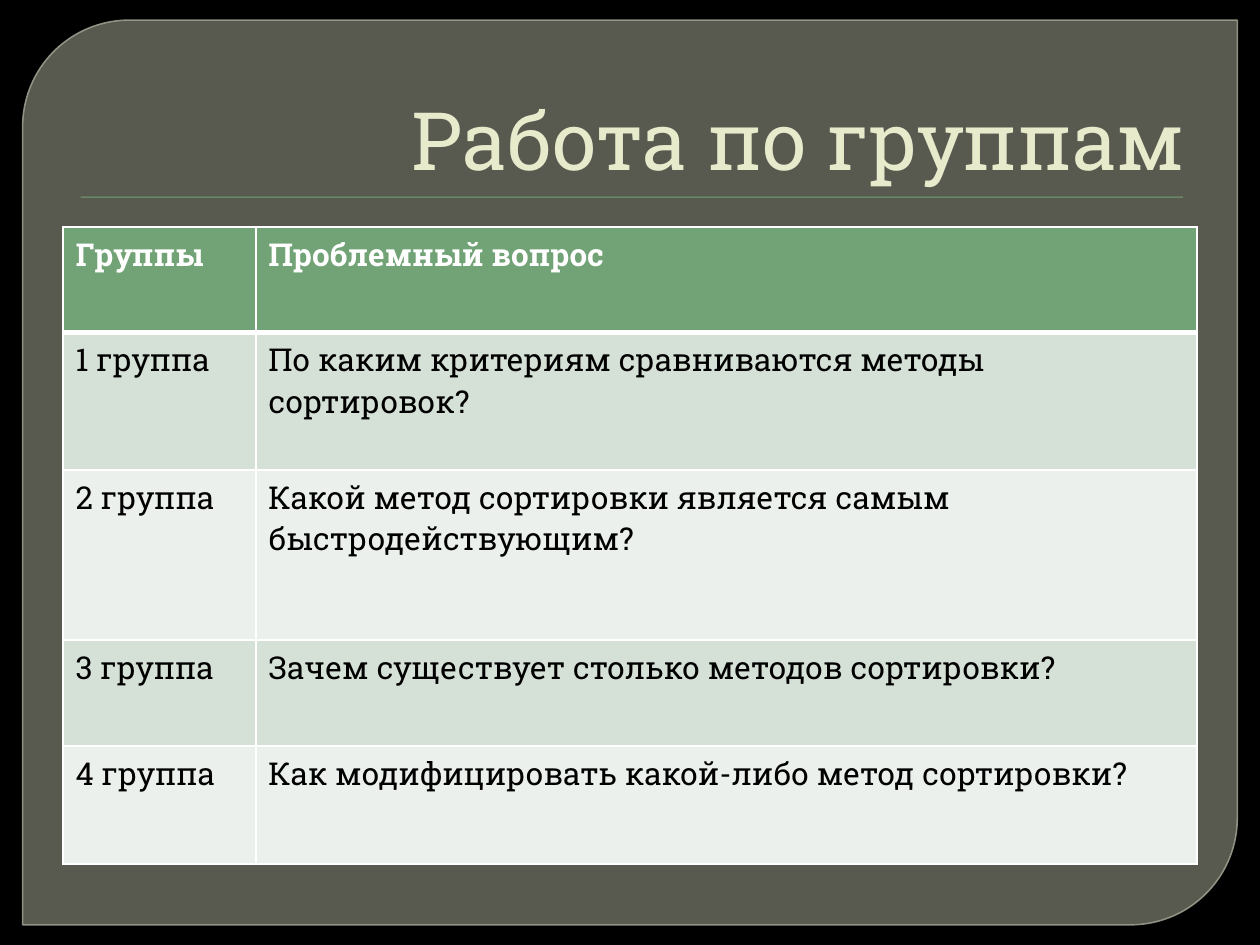
from lxml.etree import SubElement
from pptx import Presentation
from pptx.dml.color import RGBColor
from pptx.enum.shapes import MSO_SHAPE
from pptx.enum.text import MSO_ANCHOR, PP_ALIGN
from pptx.oxml.ns import qn
from pptx.util import Inches, Pt

TITLE = "Работа по группам"
HEADER = ("Группы", "Проблемный вопрос")
QUESTIONS = [
    "По каким критериям сравниваются методы сортировок?",
    "Какой метод сортировки является самым быстродействующим?",
    "Зачем существует столько методов сортировки?",
    "Как модифицировать какой-либо метод сортировки?",
]
COLUMN_WIDTHS = (1.53, 7.47)
ROW_HEIGHTS = (0.84, 1.09, 1.35, 0.84, 0.94)
BAND_COLORS = ("D5E0D6", "EBF0EC")
GREEN = "72A376"
FONT = "Roboto Slab"


def color(hex_string):
    return RGBColor.from_string(hex_string)


def box(left, top, width, height):
    return [Inches(value) for value in (left, top, width, height)]


def write(frame, text, size=18, ink="000000", bold=False, align=PP_ALIGN.LEFT):
    frame.word_wrap = True
    paragraph = frame.paragraphs[0]
    paragraph.alignment = align
    run = paragraph.add_run()
    run.text = text
    run.font.name = FONT
    run.font.size = Pt(size)
    run.font.bold = bold
    run.font.color.rgb = color(ink)


def set_alpha(fill, percent):
    """Make the solid fill of a shape or line partly transparent."""
    tint = fill._xPr.find(qn("a:solidFill"))[0]
    SubElement(tint, qn("a:alpha")).set("val", str(percent * 1000))


def set_borders(cell, bottom_width):
    properties = cell._tc.get_or_add_tcPr()
    widths = {"lnL": 1, "lnR": 1, "lnT": 1, "lnB": bottom_width}
    for position, (side, width) in enumerate(widths.items()):
        line = SubElement(properties, qn(f"a:{side}"), w=str(Pt(width)))
        solid = SubElement(line, qn("a:solidFill"))
        SubElement(solid, qn("a:srgbClr"), val="FFFFFF")
        properties.insert(position, line)


def add_panel(slide):
    panel = slide.shapes.add_shape(
        MSO_SHAPE.ROUND_2_DIAG_RECTANGLE, *box(0.18, 0.16, 9.64, 7.18))
    panel.adjustments[0] = 0.118
    panel.adjustments[1] = 0
    panel.shadow.inherit = False
    panel.fill.solid()
    panel.fill.fore_color.rgb = color("888B7B")
    set_alpha(panel.fill._fill_format if hasattr(panel.fill, "_fill_format") else panel.fill, 65)
    panel.line.width = Pt(0.87)
    panel.line.color.rgb = color("9DA090")
    set_alpha(panel.line.fill, 88)


def add_title(slide):
    rule = slide.shapes.add_shape(MSO_SHAPE.RECTANGLE, *box(0.64, 1.56, 8.75, 0.01))
    rule.shadow.inherit = False
    rule.fill.solid()
    rule.fill.fore_color.rgb = color(GREEN)
    rule.line.fill.background()

    title = slide.shapes.add_textbox(*box(0.5, 0.28, 9, 1.25))
    title.text_frame.vertical_anchor = MSO_ANCHOR.BOTTOM
    write(title.text_frame, TITLE, size=46, ink="E7EACB", align=PP_ALIGN.RIGHT)


def add_questions(slide):
    rows = [HEADER] + [(f"{number} группа", question)
                       for number, question in enumerate(QUESTIONS, 1)]
    table = slide.shapes.add_table(
        len(rows), len(HEADER),
        *box(0.5, 1.8, sum(COLUMN_WIDTHS), sum(ROW_HEIGHTS))).table
    for column, width in zip(table.columns, COLUMN_WIDTHS):
        column.width = Inches(width)
    for r, (texts, height) in enumerate(zip(rows, ROW_HEIGHTS)):
        table.rows[r].height = Inches(height)
        is_header = r == 0
        for c, text in enumerate(texts):
            cell = table.cell(r, c)
            cell.fill.solid()
            cell.fill.fore_color.rgb = color(GREEN if is_header else BAND_COLORS[(r - 1) % 2])
            set_borders(cell, bottom_width=3 if is_header else 1)
            if r == 1:
                cell._tc.tcPr.find(qn("a:lnT")).set("w", str(Pt(3)))
            write(cell.text_frame, text, bold=is_header,
                  ink="FFFFFF" if is_header else "000000")


def main():
    deck = Presentation()
    deck.slide_width, deck.slide_height = Inches(10), Inches(7.5)
    slide = deck.slides.add_slide(deck.slide_layouts[6])
    slide.background.fill.solid()
    slide.background.fill.fore_color.rgb = color("000000")
    add_panel(slide)
    add_title(slide)
    add_questions(slide)
    deck.save("out.pptx")


if __name__ == "__main__":
    main()
